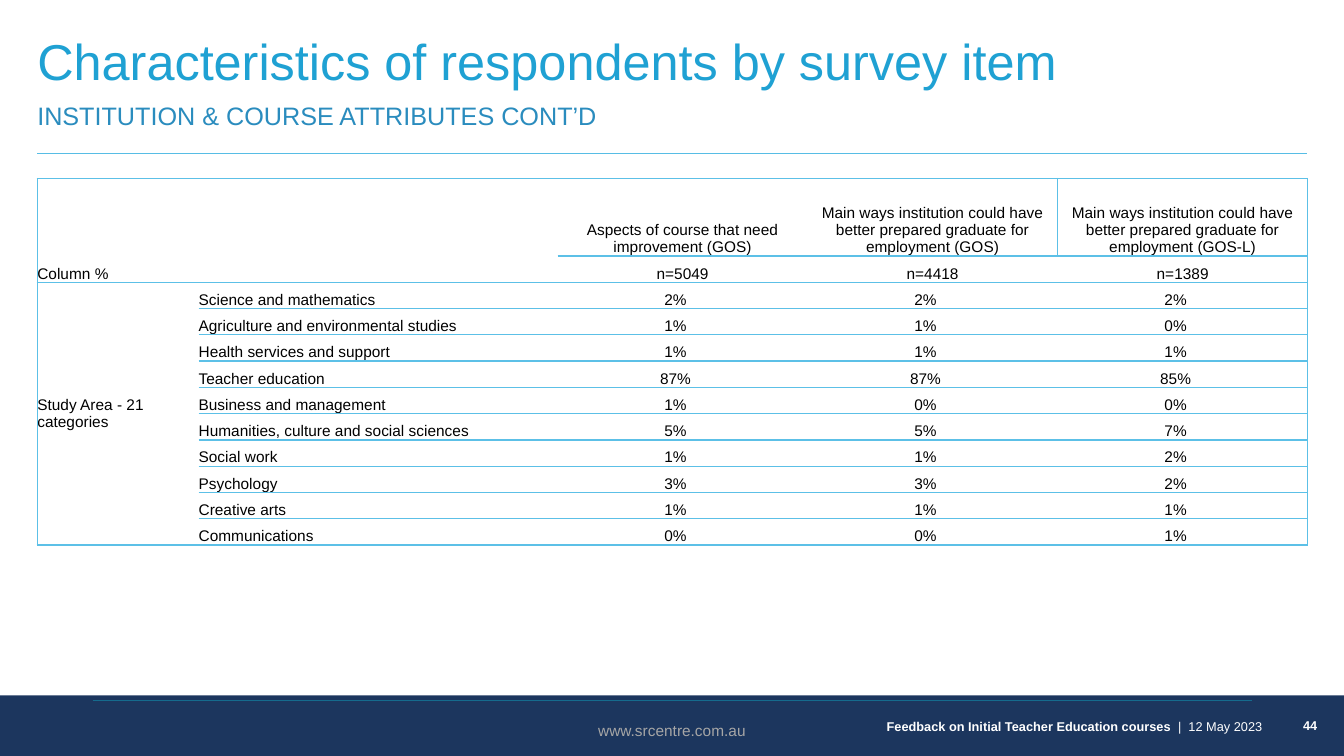
import dataclasses
import typing

import pptx
import pptx.dml.color
import pptx.enum.shapes
import pptx.enum.text
import pptx.oxml
import pptx.oxml.ns
import pptx.util

Inches = pptx.util.Inches
Pt = pptx.util.Pt
Align = pptx.enum.text.PP_ALIGN
Anchor = pptx.enum.text.MSO_ANCHOR

FONT = "Arial"
WHITE = "FFFFFF"
BLACK = "000000"
EDGE = "5CC0E7"
PLAIN = "{2D5ABB26-0587-4C30-8999-92F81FD0307C}"  # table style without grid


@dataclasses.dataclass
class Label:
    box: tuple[float, float, float, float]
    runs: list[tuple[str, bool]]
    size: float
    color: str
    align: Align = Align.LEFT
    anchor: Anchor = Anchor.TOP
    pad: tuple[float, float, float, float] = (0, 0, 0, 0)


@dataclasses.dataclass
class Rule:
    left: float
    right: float
    top: float
    color: str


@dataclasses.dataclass
class Study:
    name: str
    shares: tuple[str, str, str]


LABELS = [
    Label((4.54, 7.08, 8.12, 0.25),
          [("Feedback on Initial Teacher Education courses  ", True), ("|  12 May 2023", False)],
          9.1, WHITE, Align.RIGHT, Anchor.MIDDLE, (0.1, 0.05, 0.14, 0.05)),
    Label((12.66, 6.95, 0.67, 0.5), [("44", True)], 9.1, WHITE, Align.CENTER, Anchor.MIDDLE),
    Label((4.97, 7.1, 3.39, 0.29), [("www.srcentre.com.au", False)], 11, "A6A6A6",
          Align.CENTER, Anchor.TOP, (0.1, 0.05, 0.1, 0.05)),
    Label((0.37, 0.3, 12.6, 0.69), [("Characteristics of respondents by survey item", False)],
          36, "1FA1D3"),
    Label((0.37, 0.99, 12.6, 0.52), [("INSTITUTION & COURSE ATTRIBUTES CONT’D", False)],
          18, "2A8CBE"),
]
RULES = [Rule(0.92, 12.42, 6.95, "156B8D"), Rule(0.37, 12.96, 1.52, "57BDE5")]

HEADS = [
    "Aspects of course that need improvement (GOS)",
    "Main ways institution could have better prepared graduate for employment (GOS)",
    "Main ways institution could have better prepared graduate for employment (GOS-L)",
]
COUNTS = ["n=5049", "n=4418", "n=1389"]
STUDIES = [
    Study("Science and mathematics", ("2%", "2%", "2%")),
    Study("Agriculture and environmental studies", ("1%", "1%", "0%")),
    Study("Health services and support", ("1%", "1%", "1%")),
    Study("Teacher education", ("87%", "87%", "85%")),
    Study("Business and management", ("1%", "0%", "0%")),
    Study("Humanities, culture and social sciences", ("5%", "5%", "7%")),
    Study("Social work", ("1%", "1%", "2%")),
    Study("Psychology", ("3%", "3%", "2%")),
    Study("Creative arts", ("1%", "1%", "1%")),
    Study("Communications", ("0%", "0%", "1%")),
]
WIDTHS = [1.6, 3.56, 2.48, 2.48, 2.48]
TOP_ROW, ROW = 0.77, 0.261


def paint(code: str) -> pptx.dml.color.RGBColor:
    return pptx.dml.color.RGBColor.from_string(code)


def write(frame: typing.Any, runs: list[tuple[str, bool]], *, size: float,
          color: str, align: Align) -> None:
    line = frame.paragraphs[0]
    line.alignment = align
    for words, bold in runs:
        run = line.add_run()
        run.text = words
        run.font.name = FONT
        run.font.size = Pt(size)
        run.font.bold = bold
        run.font.color.rgb = paint(color)


def add_label(slide: typing.Any, label: Label) -> None:
    frame = slide.shapes.add_textbox(*map(Inches, label.box)).text_frame
    frame.word_wrap = True
    frame.vertical_anchor = label.anchor
    (frame.margin_left, frame.margin_top,
     frame.margin_right, frame.margin_bottom) = map(Inches, label.pad)
    write(frame, label.runs, size=label.size, color=label.color, align=label.align)


def add_rule(slide: typing.Any, rule: Rule) -> None:
    line = slide.shapes.add_connector(
        pptx.enum.shapes.MSO_CONNECTOR.STRAIGHT, Inches(rule.left), Inches(rule.top),
        Inches(rule.right), Inches(rule.top))
    line.line.color.rgb = paint(rule.color)
    line.line.width = Pt(0.75)
    line._element.spPr.append(pptx.oxml.parse_xml(
        f"<a:effectLst {pptx.oxml.ns.nsdecls('a')}/>"))


def edge(cell: typing.Any, sides: str) -> None:
    props = cell._tc.get_or_add_tcPr()
    for side in "LRTB":
        ink = (f'<a:solidFill><a:srgbClr val="{EDGE}"/></a:solidFill>'
               if side in sides else "<a:noFill/>")
        props.append(pptx.oxml.parse_xml(
            f'<a:ln{side} {pptx.oxml.ns.nsdecls("a")} w="{Pt(1)}">{ink}</a:ln{side}>'))


def fill_cell(cell: typing.Any, words: str, *, sides: str, align: Align = Align.LEFT,
              anchor: Anchor = Anchor.BOTTOM, right: float = 0) -> None:
    cell.margin_left = cell.margin_top = cell.margin_bottom = 0
    cell.margin_right = Inches(right)
    cell.vertical_anchor = anchor
    edge(cell, sides)
    cell.fill.solid()
    cell.fill.fore_color.rgb = paint(WHITE)
    write(cell.text_frame, [(words, False)], size=11, color=BLACK, align=align)


def add_grid(slide: typing.Any) -> None:
    count = len(STUDIES) + 2
    frame = slide.shapes.add_table(count, len(WIDTHS), Inches(0.37), Inches(1.77),
                                   Inches(sum(WIDTHS)), Inches(TOP_ROW + ROW * (count - 1)))
    grid = frame.table
    grid.first_row = grid.horz_banding = False
    grid._tbl.tblPr.find(pptx.oxml.ns.qn("a:tableStyleId")).text = PLAIN
    for col, width in zip(grid.columns, WIDTHS):
        col.width = Inches(width)
    for i, row in enumerate(grid.rows):
        row.height = Inches(ROW if i else TOP_ROW)

    # Merged row labels
    grid.cell(0, 0).merge(grid.cell(1, 1))
    fill_cell(grid.cell(0, 0), "Column %", sides="LTB")
    grid.cell(2, 0).merge(grid.cell(count - 1, 0))
    fill_cell(grid.cell(2, 0), "Study Area - 21 categories", sides="LTB", anchor=Anchor.MIDDLE)

    # Study names
    for i, study in enumerate(STUDIES, 2):
        fill_cell(grid.cell(i, 1), study.name, sides="TB")

    # Headings, counts and shares
    for i, texts in enumerate([HEADS, COUNTS, *(study.shares for study in STUDIES)]):
        for j, words in enumerate(texts, 2):
            last = j == len(WIDTHS) - 1
            sides = "TB" + ("R" if last else "") + ("L" if last and i == 0 else "")
            if i == 0 and j == len(WIDTHS) - 2:
                sides += "R"
            fill_cell(grid.cell(i, j), words, sides=sides, align=Align.CENTER,
                      right=0.14 if i > 1 else 0)


def main() -> None:
    deck = pptx.Presentation()
    deck.slide_width, deck.slide_height = Inches(13.33), Inches(7.5)
    slide = deck.slides.add_slide(deck.slide_layouts[6])

    # Footer band
    band = slide.shapes.add_shape(pptx.enum.shapes.MSO_SHAPE.RECTANGLE,
                                  0, Inches(6.9), Inches(13.33), Inches(0.6))
    band.shadow.inherit = False
    band.fill.solid()
    band.fill.fore_color.rgb = paint("1C365E")
    band.line.fill.background()

    # Titles, footer text and rules
    for label in LABELS:
        add_label(slide, label)
    for rule in RULES:
        add_rule(slide, rule)

    # Table of shares
    add_grid(slide)
    deck.save("out.pptx")


if __name__ == "__main__":
    main()
